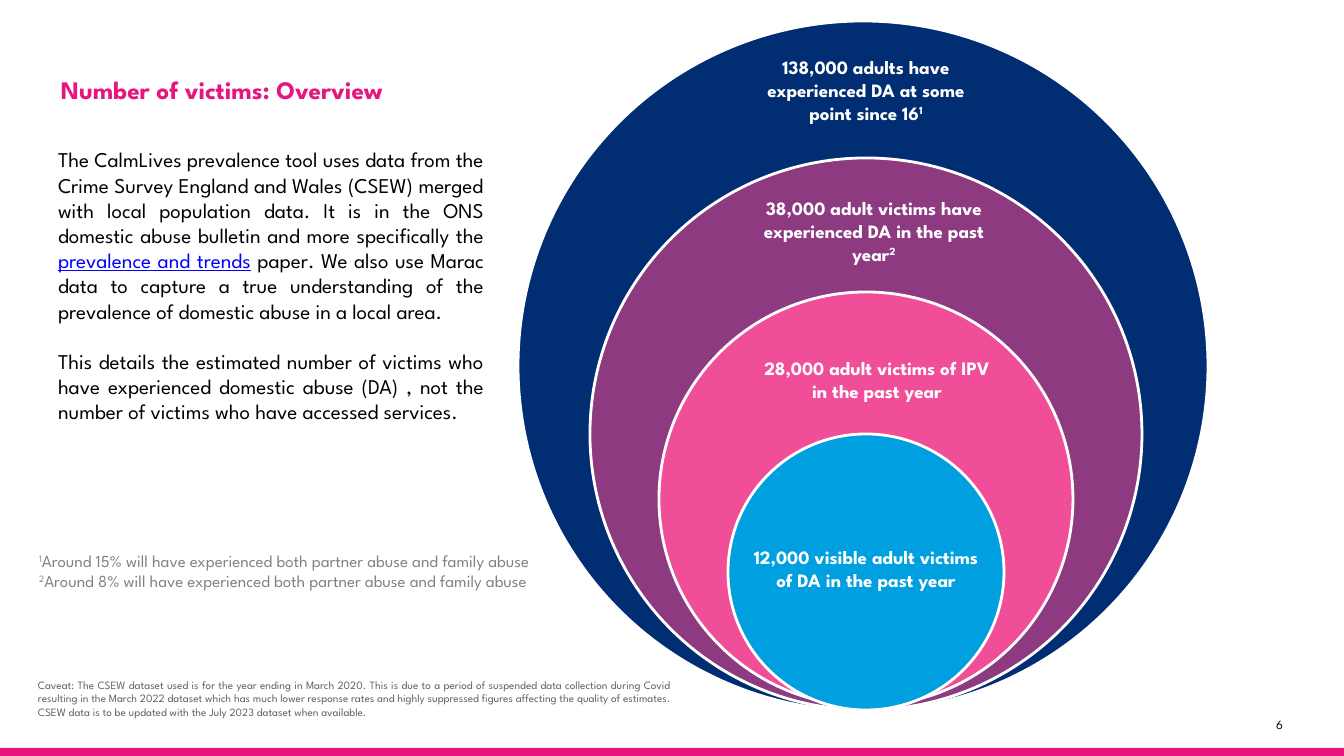
"""Build the slide on the number of domestic abuse victims as nested circles."""
from pptx import Presentation
from pptx.dml.color import RGBColor
from pptx.enum.shapes import MSO_SHAPE
from pptx.enum.text import MSO_ANCHOR, PP_ALIGN
from pptx.util import Emu, Pt

FONT = "League Spartan"
PINK, WHITE, BLACK, LINK = "E71580", "FFFFFF", "000000", "0000FF"
FOOTNOTE_GREY, CAVEAT_GREY = "808285", "606164"
SLIDE_WIDTH, SLIDE_HEIGHT, FOOTER_HEIGHT = 1344, 756, 8
CIRCLE_STEP = 138

TITLE = [["Number of victims: Overview"]]
INTRODUCTION = [
    ["The CalmLives prevalence tool uses data from the Crime Survey England and Wales (CSEW) "
     "merged with local population data. It is in the ONS domestic abuse bulletin and more "
     "specifically the ",
     ("prevalence and trends", "link"),
     " paper. We also use Marac data to capture a true understanding of the prevalence of "
     "domestic abuse in a local area."],
    ["This details the estimated number of victims who have experienced domestic abuse (DA) , "
     "not the number of victims who have accessed services."],
]
FOOTNOTES = [
    [("1", "super"), "Around 15% will have experienced both partner abuse and family abuse"],
    [("2", "super"), "Around 8% will have experienced both partner abuse and family abuse"],
]
CAVEAT = [[
    "Caveat: The CSEW dataset used is for the year ending in March 2020. This is due to a period "
    "of suspended data collection during Covid resulting in the March 2022 dataset which has much "
    "lower response rates and highly suppressed figures affecting the quality of estimates. CSEW "
    "data is to be updated with the July 2023 dataset when available."]]
PAGE_NUMBER = [["6"]]

# center x, bottom, fill
CIRCLES = [
    (863, 711, "012D72"),
    (866, 710, "8E3A80"),
    (866, 706, "F04E98"),
    (866, 710, "009FDF"),
]
# area, pieces
CIRCLE_LABELS = [
    ((750, 56, 232, 68),
     ["138,000 adults have experienced DA at some point since 16", ("1", "super")]),
    ((758, 197, 232, 92),
     ["38,000 adult victims have experienced DA in the past year", ("2", "super")]),
    ((761, 357, 232, 68), ["28,000 adult victims of IPV in the past year"]),
    ((750, 546, 232, 92), ["12,000 visible adult victims of DA in the past year"]),
]


def px(length):
    return Emu(round(length * 914400 / 100.8))


def color(code):
    return RGBColor.from_string(code)


def add_shape(page, kind, area, fill, outline=None):
    shape = page.shapes.add_shape(kind, *map(px, area))
    shape.shadow.inherit = False
    shape.fill.solid()
    shape.fill.fore_color.rgb = color(fill)
    if outline:
        shape.line.color.rgb = color(outline)
        shape.line.width = Pt(2)
    else:
        shape.line.fill.background()


def add_text(page, area, paragraphs, size, ink, bold=False, align=PP_ALIGN.LEFT,
             anchor=MSO_ANCHOR.TOP, gap=0):
    frame = page.shapes.add_textbox(*map(px, area)).text_frame
    frame.word_wrap = True
    frame.vertical_anchor = anchor
    frame.margin_left = frame.margin_right = frame.margin_top = frame.margin_bottom = 0
    for index, pieces in enumerate(paragraphs):
        para = frame.add_paragraph() if index else frame.paragraphs[0]
        para.alignment = align
        if index and gap:
            para.space_before = Pt(gap)
        para.font.name, para.font.size, para.font.bold = FONT, Pt(size), bold
        para.font.color.rgb = color(ink)
        for piece in pieces:
            words, style = (piece, None) if isinstance(piece, str) else piece
            span = para.add_run()
            span.text = words
            if style == "super":
                span._r.get_or_add_rPr().set("baseline", "30000")
            elif style == "link":
                span.font.underline = True
                span.font.color.rgb = color(LINK)


def main():
    deck = Presentation()
    deck.slide_width, deck.slide_height = px(SLIDE_WIDTH), px(SLIDE_HEIGHT)
    page = deck.slides.add_slide(deck.slide_layouts[6])

    footer = (0, SLIDE_HEIGHT - FOOTER_HEIGHT, SLIDE_WIDTH, FOOTER_HEIGHT)
    add_shape(page, MSO_SHAPE.RECTANGLE, footer, PINK)
    add_text(page, (1247, 717, 36, 15), PAGE_NUMBER, 9, BLACK,
             align=PP_ALIGN.RIGHT, anchor=MSO_ANCHOR.BOTTOM)
    add_text(page, (61, 75, 1222, 30), TITLE, 18, PINK, bold=True, anchor=MSO_ANCHOR.BOTTOM)

    for index, (center, bottom, fill) in enumerate(CIRCLES):
        diameter = CIRCLE_STEP * (len(CIRCLES) + 1 - index)
        area = (center - diameter / 2, bottom - diameter, diameter, diameter)
        add_shape(page, MSO_SHAPE.OVAL, area, fill, WHITE)
    for area, pieces in CIRCLE_LABELS:
        add_text(page, area, [pieces], 13.5, WHITE, bold=True, align=PP_ALIGN.CENTER)

    add_text(page, (58, 147, 426, 357), INTRODUCTION, 15, BLACK, align=PP_ALIGN.JUSTIFY, gap=18)
    add_text(page, (39, 551, 515, 82), FOOTNOTES, 12, FOOTNOTE_GREY)
    add_text(page, (38, 678, 634, 54), CAVEAT, 8, CAVEAT_GREY, align=PP_ALIGN.JUSTIFY)
    deck.save("out.pptx")


if __name__ == "__main__":
    main()
